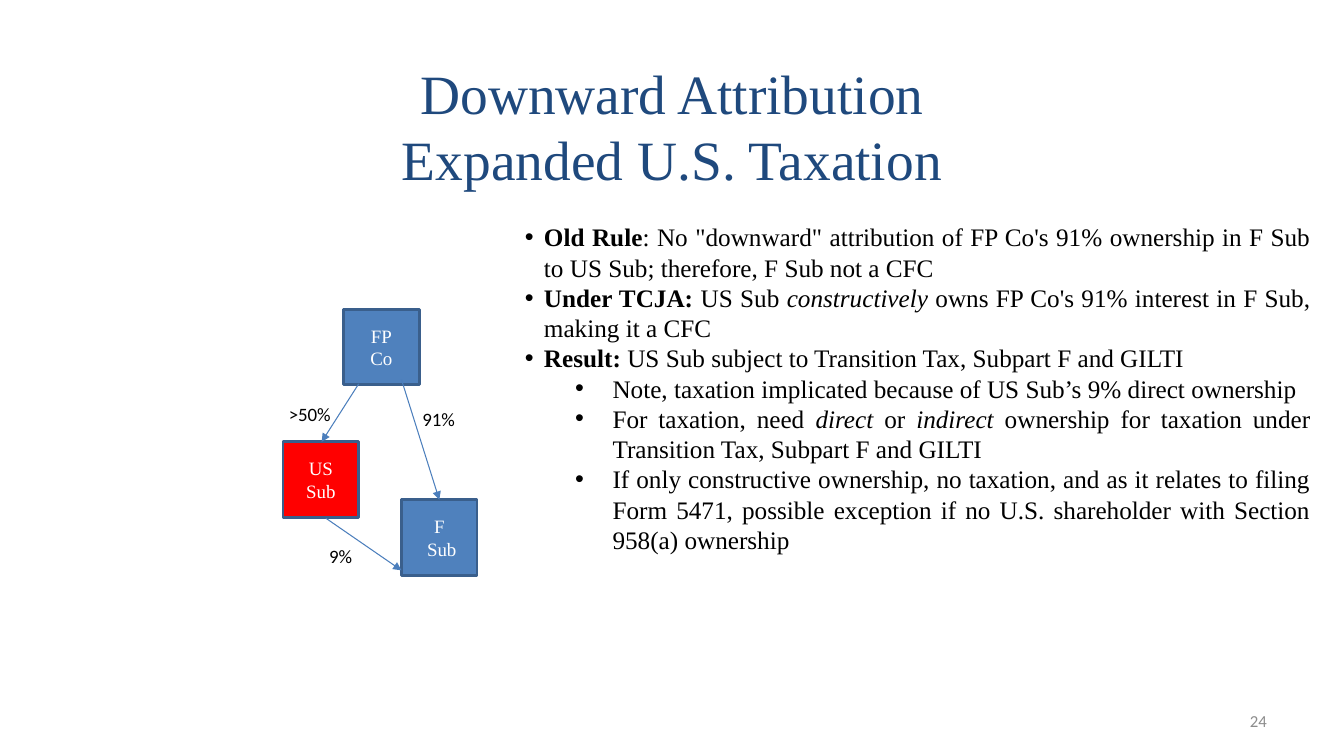
"""Build the downward attribution slide on a grid of 16 columns by 9 rows."""
from dataclasses import dataclass

from lxml.etree import SubElement
from pptx import Presentation
from pptx.dml.color import RGBColor
from pptx.enum.shapes import MSO_CONNECTOR, MSO_SHAPE
from pptx.enum.text import MSO_ANCHOR, PP_ALIGN
from pptx.oxml.ns import qn
from pptx.slide import Slide
from pptx.text.text import TextFrame
from pptx.util import Inches, Pt

HEX = {"navy": "1F497D", "blue": "4F81BD", "red": "FF0000", "edge": "3A5F8C",
       "line": "4B7EBC", "white": "FFFFFF", "black": "000000", "gray": "8C8C8C"}
UNIT = Inches(7.5) // 9
SIDE = 0.9
SERIF, SANS = "Times New Roman", "Calibri"
LEFT, MID, RIGHT, EVEN = PP_ALIGN.LEFT, PP_ALIGN.CENTER, PP_ALIGN.RIGHT, PP_ALIGN.JUSTIFY
TOP, CORE = MSO_ANCHOR.TOP, MSO_ANCHOR.MIDDLE


@dataclass
class Style:
    font: str
    size: float
    tint: str
    align: PP_ALIGN = LEFT
    hold: MSO_ANCHOR = TOP


@dataclass
class Run:
    text: str
    bold: bool = False
    slant: bool = False


@dataclass
class Point:
    runs: list[Run]
    level: int = 0


@dataclass
class Label:
    text: str
    col: float
    row: float
    wide: float
    high: float
    style: Style
    wrap: bool = True


@dataclass
class Firm:
    lines: list[str]
    col: float
    row: float
    fill: str


@dataclass
class Arrow:
    start: tuple[float, float]
    end: tuple[float, float]


HEAD = Style(SERIF, 39.6, "navy", MID, CORE)
NAME = Style(SERIF, 13.5, "white", MID, CORE)
SHARE = Style(SANS, 13.5, "black")
BODY = Style(SERIF, 18, "black", EVEN)
PAGE = Style(SANS, 12, "gray", RIGHT, CORE)
INDENTS = [(0.19, -0.19), (0.87, -0.37)]

FIRMS = [
    Firm(["FP", "Co"], 4.09, 3.68, "blue"),
    Firm(["US", "Sub"], 3.37, 5.26, "red"),
    Firm(["F", " Sub"], 4.78, 5.95, "blue"),
]
ARROWS = [
    Arrow((4.27, 4.57), (3.83, 5.26)),
    Arrow((3.88, 6.17), (4.78, 6.79)),
    Arrow((4.78, 4.52), (5.23, 5.95)),
]
LABELS = [
    Label("Downward Attribution\vExpanded U.S. Taxation", 1.42, 0.74, 13.16, 1.5, HEAD),
    Label(">50%", 3.32, 4.73, 0.9, 0.4, SHARE),
    Label("9%", 3.8, 6.43, 0.52, 0.4, SHARE, False),
    Label("91%", 4.91, 4.79, 0.74, 0.4, SHARE),
    Label("24", 11.46, 8.33, 3.74, 0.49, PAGE),
]
RULES = Label("", 6.13, 2.58, 9.59, 5.17, BODY)
POINTS = [
    Point([Run("Old Rule", bold=True),
           Run(": No \"downward\" attribution of FP Co's 91% ownership in F Sub "
               "to US Sub; therefore, F Sub not a CFC")]),
    Point([Run("Under TCJA: ", bold=True), Run("US Sub "), Run("constructively", slant=True),
           Run(" owns FP Co's 91% interest in F Sub, making it a CFC")]),
    Point([Run("Result: ", bold=True),
           Run("US Sub subject to Transition Tax, Subpart F and GILTI")]),
    Point([Run("Note, taxation implicated because of US Sub’s 9% direct ownership")], 1),
    Point([Run("For taxation, need "), Run("direct", slant=True), Run(" or "),
           Run("indirect ", slant=True),
           Run("ownership for taxation under Transition Tax, Subpart F and GILTI")], 1),
    Point([Run("If only constructive ownership, no taxation, and as it relates to filing "
               "Form 5471, possible exception if no U.S. shareholder with Section "
               "958(a) ownership")], 1),
]


def grid(*cells: float) -> list[int]:
    return [round(cell * UNIT) for cell in cells]


def shade(name: str) -> RGBColor:
    return RGBColor.from_string(HEX[name])


def apply(target: object, values: dict[str, object]) -> None:
    for key, value in values.items():
        setattr(target, key, value)


def write(frame: TextFrame, points: list[Point], style: Style,
          wrap: bool = True, dots: bool = False) -> None:
    apply(frame, {"word_wrap": wrap, "vertical_anchor": style.hold})
    for rank, point in enumerate(points):
        para = frame.add_paragraph() if rank else frame.paragraphs[0]
        apply(para, {"alignment": style.align, "level": point.level})
        if dots:
            props = para._p.get_or_add_pPr()
            for key, inch in zip(("marL", "indent"), INDENTS[point.level]):
                props.set(key, str(Inches(inch)))
            SubElement(props, qn("a:buFont"), typeface="Arial")
            SubElement(props, qn("a:buChar"), char="•")
        for part in point.runs:
            for rank_in, text in enumerate(part.text.split("\v")):
                if rank_in:
                    para.add_line_break()
                run = para.add_run()
                run.text = text
                apply(run.font, {"name": style.font, "size": Pt(style.size),
                                 "bold": part.bold, "italic": part.slant})
                run.font.color.rgb = shade(style.tint)


def label(slide: Slide, item: Label) -> TextFrame:
    box = slide.shapes.add_textbox(*grid(item.col, item.row, item.wide, item.high))
    if item.text:
        write(box.text_frame, [Point([Run(item.text)])], item.style, item.wrap)
    return box.text_frame


def firm(slide: Slide, item: Firm) -> None:
    box = slide.shapes.add_shape(MSO_SHAPE.RECTANGLE, *grid(item.col, item.row, SIDE, SIDE))
    box.shadow.inherit = False
    box.fill.solid()
    box.fill.fore_color.rgb = shade(item.fill)
    box.line.color.rgb = shade("edge")
    box.line.width = Pt(2)
    write(box.text_frame, [Point([Run(line)]) for line in item.lines], NAME)


def arrow(slide: Slide, item: Arrow) -> None:
    link = slide.shapes.add_connector(MSO_CONNECTOR.STRAIGHT, *grid(*item.start, *item.end))
    link.line.color.rgb = shade("line")
    link.line.width = Pt(0.75)
    props = link._element.spPr
    SubElement(props.find(qn("a:ln")), qn("a:tailEnd"), type="triangle")
    SubElement(props, qn("a:effectLst"))


def main() -> None:
    deck = Presentation()
    apply(deck, {"slide_width": 16 * UNIT, "slide_height": 9 * UNIT})
    slide = deck.slides.add_slide(deck.slide_layouts[6])
    for item in FIRMS:
        firm(slide, item)
    for item in ARROWS:
        arrow(slide, item)
    for item in LABELS:
        label(slide, item)
    write(label(slide, RULES), POINTS, BODY, dots=True)
    deck.save("out.pptx")


if __name__ == "__main__":
    main()
